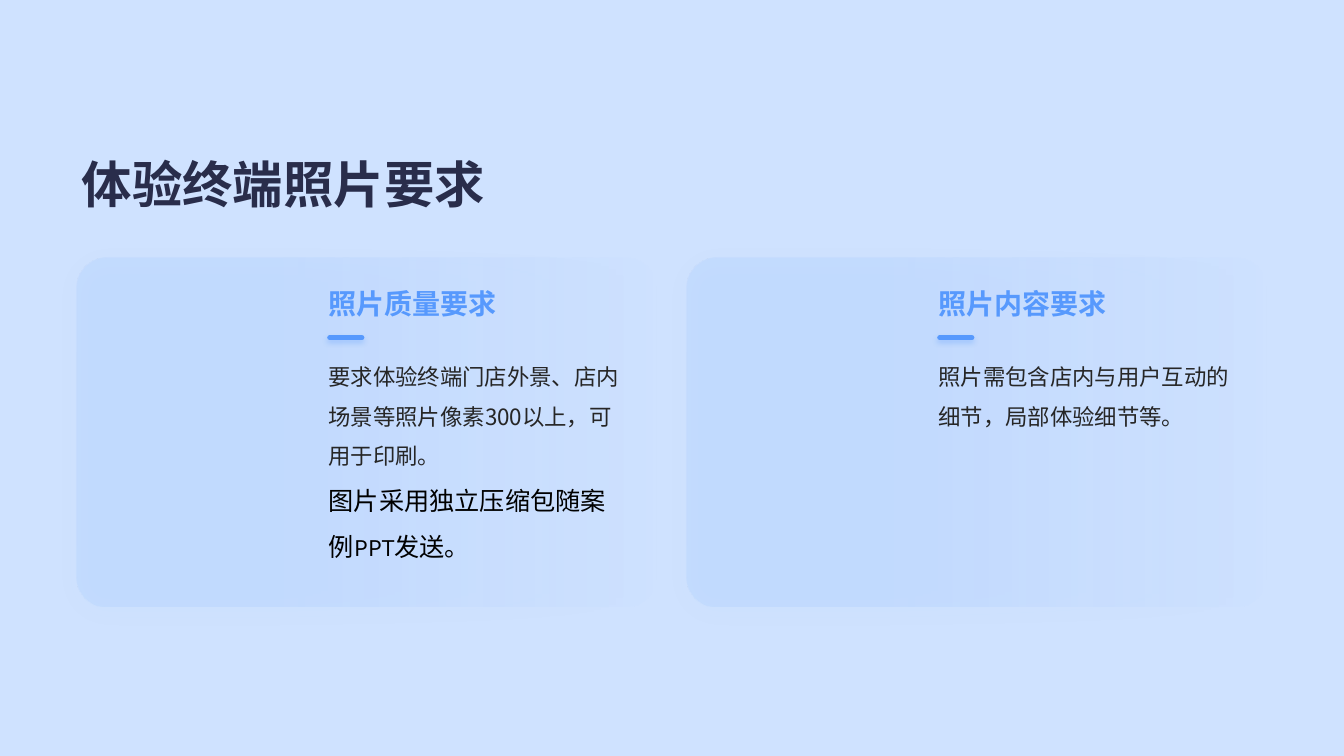
from dataclasses import dataclass
from lxml import etree
from pptx import Presentation
from pptx.dml.color import RGBColor
from pptx.enum.shapes import MSO_CONNECTOR, MSO_SHAPE
from pptx.enum.text import MSO_ANCHOR, MSO_AUTO_SIZE, PP_ALIGN
from pptx.oxml import parse_xml
from pptx.oxml.ns import nsdecls, qn
from pptx.util import Inches, Pt

TITLE = "体验终端照片要求"
CARDS = [
    ("照片质量要求", [
        ("要求体验终端门店外景、店内场景等照片像素300以上，可用于印刷。", "body"),
        ("图片采用独立压缩包随案例PPT发送。", "note"),
    ]),
    ("照片内容要求", [
        ("照片需包含店内与用户互动的细节，局部体验细节等。", "body"),
    ]),
]


@dataclass(frozen=True)
class Style:
    size: float
    font: str
    color: str
    bold: bool = False
    pitch: float = 0


class Theme:
    back = "CFE2FF"
    card = "9AC2FE"
    accent = "5799FD"
    glow = "0366FC"
    asian = "Noto Sans CJK SC"
    title = Style(36, "Karla", "292D4B", True)
    head = Style(20, asian, accent, True)
    body = Style(16, asian, "262626", pitch=28.5)
    note = Style(18, "Karla", "000000", pitch=33)


LEFT, TOP, WIDE, HIGH, STEP = 0.76, 2.56, 5.75, 3.46, 6.05
INSET, TEXT_W = 2.5, 2.96


def place(shape, x, y, w, h):
    shape.left, shape.top = Inches(x), Inches(y)
    shape.width, shape.height = Inches(w), Inches(h)


def write(holder, box, lines, anchor):
    """Move a placeholder to box and fill it with (text, style) paragraphs."""
    place(holder, *box)
    frame = holder.text_frame
    frame.word_wrap = True
    frame.auto_size = MSO_AUTO_SIZE.NONE
    frame.vertical_anchor = anchor
    frame.margin_left = frame.margin_right = 0
    frame.margin_top = frame.margin_bottom = 0
    for i, (text, style) in enumerate(lines):
        para = frame.paragraphs[0] if i == 0 else frame.add_paragraph()
        props = para._p.get_or_add_pPr()
        props.set("marL", "0")
        props.set("indent", "0")
        etree.SubElement(props, qn("a:buNone"))
        para.alignment = PP_ALIGN.LEFT
        para.space_before = Pt(0)
        para.line_spacing = Pt(style.pitch) if style.pitch else 1.0
        run = para.add_run()
        run.text = text
        font = run.font
        font.size, font.bold, font.name = Pt(style.size), style.bold, style.font
        font.color.rgb = RGBColor.from_string(style.color)
        asian = etree.SubElement(run._r.get_or_add_rPr(), qn("a:ea"))
        asian.set("typeface", Theme.asian)


def shade(shape, color, alpha, blur, dist):
    """Give a shape a soft shadow that falls straight down."""
    shape._element.spPr.append(parse_xml(
        f'<a:effectLst {nsdecls("a")}><a:outerShdw blurRad="{Pt(blur)}" '
        f'dist="{Pt(dist)}" dir="5400000" algn="t" rotWithShape="0">'
        f'<a:srgbClr val="{color}"><a:alpha val="{alpha * 1000}"/></a:srgbClr>'
        '</a:outerShdw></a:effectLst>'))


def add_card(slide, x):
    card = slide.shapes.add_shape(
        MSO_SHAPE.ROUNDED_RECTANGLE, Inches(x), Inches(TOP), Inches(WIDE), Inches(HIGH))
    card.adjustments[0] = 0.087
    stops = "".join(
        f'<a:gs pos="{pos * 1000}"><a:srgbClr val="{Theme.card}">'
        f'<a:alpha val="{alpha * 1000}"/></a:srgbClr></a:gs>'
        for pos, alpha in ((0, 0), (65, 20)))
    card._element.spPr.append(parse_xml(
        f'<a:gradFill {nsdecls("a")} rotWithShape="1"><a:gsLst>{stops}</a:gsLst>'
        '<a:lin ang="10800000" scaled="0"/></a:gradFill>'))
    card.line.fill.background()
    shade(card, Theme.accent, 10, 17, 3)
    slide.shapes._spTree.insert(2, card._element)  # behind the text


def add_dash(slide, x):
    y = Inches(TOP + 0.79)
    dash = slide.shapes.add_connector(
        MSO_CONNECTOR.STRAIGHT, Inches(x), y, Inches(x + 0.32), y)
    dash.line.color.rgb = RGBColor.from_string(Theme.accent)
    dash.line.width = Pt(3.5)
    dash.line._get_or_add_ln().set("cap", "rnd")
    shade(dash, Theme.glow, 20, 4, 2)


def main():
    deck = Presentation()
    deck.slide_width, deck.slide_height = Inches(13.33), Inches(7.5)
    slide = deck.slides.add_slide(deck.slide_layouts.get_by_name("Comparison"))
    slide.background.fill.solid()
    slide.background.fill.fore_color.rgb = RGBColor.from_string(Theme.back)
    title, *rest = slide.placeholders
    write(title, (0.81, 1.33, 11.81, 0.79), [(TITLE, Theme.title)], MSO_ANCHOR.BOTTOM)
    for i, (head, lines) in enumerate(CARDS):
        x = LEFT + i * STEP
        text_x = x + INSET
        add_card(slide, x)
        write(rest[2 * i], (text_x, TOP + 0.23, TEXT_W, 0.44),
              [(head, Theme.head)], MSO_ANCHOR.MIDDLE)
        write(rest[2 * i + 1], (text_x, TOP + 0.91, TEXT_W, 2.33),
              [(text, getattr(Theme, kind)) for text, kind in lines], MSO_ANCHOR.TOP)
        add_dash(slide, text_x + 0.01)
    deck.save("out.pptx")


if __name__ == "__main__":
    main()
